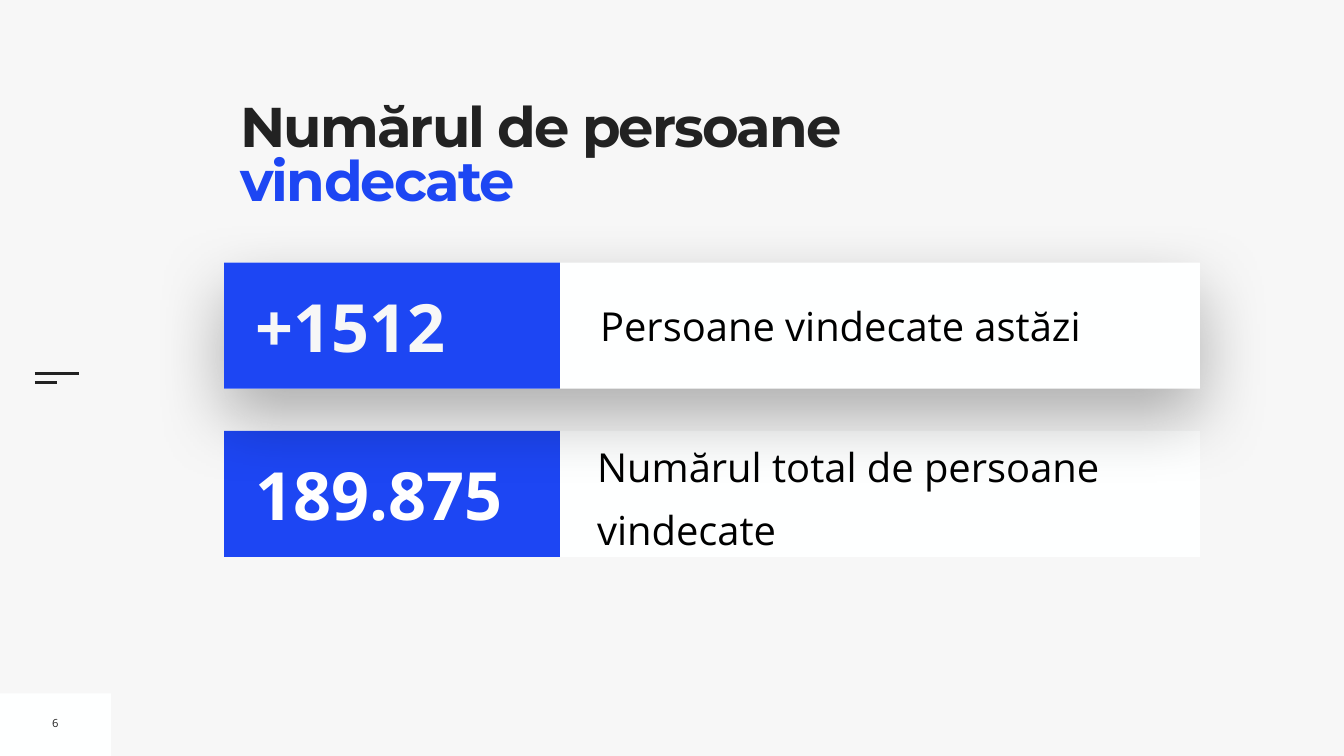
from lxml.etree import SubElement as Sub
from pptx import Presentation
from pptx.dml.color import RGBColor
from pptx.enum.shapes import MSO_CONNECTOR as Conn, MSO_SHAPE as Kind
from pptx.enum.text import MSO_ANCHOR as Anchor, PP_ALIGN as Align
from pptx.oxml.ns import qn
from pptx.util import Inches, Pt

BLUE, DARK, PALE, WHITE = "1D46F3", "222222", "F7F7F7", "FEFFFF"
LEFT, HIGH, WIDE = 4.45, 2.5, 6.66


def color(code):
    """Turn a hex string into a colour."""
    return RGBColor.from_string(code)


def paint(item, code):
    """Give a fill format one solid colour."""
    item.fill.solid()
    item.fill.fore_color.rgb = color(code)


def style(run, code, **form):
    """Set the font values and the colour of a run."""
    for name, value in form.items():
        setattr(run.font, name, value)
    run.font.color.rgb = color(code)


def frame(shape, inset, **form):
    """Set equal margins and other values of a text frame."""
    text = shape.text_frame
    for side in ("left", "top", "right", "bottom"):
        setattr(text, f"margin_{side}", Inches(inset))
    for name, value in form.items():
        setattr(text, name, value)
    return text


def block(slide, box, code):
    """Add a plain filled rectangle."""
    shape = slide.shapes.add_shape(Kind.RECTANGLE, *map(Inches, box))
    shape.shadow.inherit = False
    paint(shape, code)
    shape.line.fill.background()
    return shape


def shade(shape):
    """Add a soft shadow below a shape."""
    list_ = shape._element.spPr.find(qn("a:effectLst"))
    outer = Sub(list_, qn("a:outerShdw"), blurRad=str(Pt(100)), dist=str(Pt(40)),
                dir="5400000", algn="ctr", rotWithShape="0")
    tint = Sub(outer, qn("a:srgbClr"), val="000000")
    Sub(tint, qn("a:alpha"), val="30000")


def label(slide, box, words, code, size, inset=0.1, wrap=True, bold=False, **form):
    """Add a text box with one line of styled text."""
    shape = slide.shapes.add_textbox(*map(Inches, box))
    text = frame(shape, inset, word_wrap=wrap, vertical_anchor=Anchor.MIDDLE)
    para = text.paragraphs[0]
    for name, value in form.items():
        setattr(para, name, value)
    run = para.add_run()
    run.text = words
    style(run, code, name="Open Sans", size=Pt(size), bold=bold)


def rule(slide, top, length):
    """Add a short horizontal line at the left edge."""
    line = slide.shapes.add_connector(
        Conn.STRAIGHT, Inches(0.69), Inches(top), Inches(0.69 + length), Inches(top))
    line.line.color.rgb = color(DARK)
    line.line.width = Pt(3)
    Sub(line._element.spPr, qn("a:effectLst"))


def head(slide):
    """Place and fill the two-colour title."""
    title = slide.shapes.title
    spot = {"left": 4.77, "top": 2.07, "width": 13.01, "height": 2.73}
    for name, value in spot.items():
        setattr(title, name, Inches(value))
    paint(title, PALE)
    text = frame(title, 0, word_wrap=True, vertical_anchor=Anchor.TOP)
    para = text.paragraphs[0]
    para.alignment, para.line_spacing = Align.LEFT, 0.8
    for words, code in (("Numărul de persoane ", DARK), ("vindecate", BLUE)):
        run = para.add_run()
        run.text = words
        style(run, code, name="Montserrat", size=Pt(80), bold=True)
        run.font._element.set("spc", "-270")


def card(slide, top, count, code, words, box, raised=False, **form):
    """Add a card with a figure on blue and its meaning on white."""
    base = block(slide, (LEFT, top, 19.36, HIGH), WHITE)
    if raised:
        shade(base)
    label(slide, box, words, "000000", 57, **form)
    block(slide, (LEFT, top, WIDE, HIGH), BLUE)
    label(slide, (4.98, top + 0.35, 6.03, 1.8), count, code, 95, bold=True)


def main():
    """Build the slide and save it."""
    deck = Presentation()
    deck.slide_width, deck.slide_height = Inches(26.67), Inches(15)
    slide = deck.slides.add_slide(deck.slide_layouts[5])
    paint(slide.background, PALE)
    block(slide, (0, 13.76, 2.2, 1.24), WHITE)
    rule(slide, 7.41, 0.88)
    rule(slide, 7.59, 0.44)
    head(slide)
    label(slide, (0.93, 14.09, 0.34, 0.51), "6", DARK, 16, wrap=False,
          alignment=Align.CENTER)
    card(slide, 8.55, "189.875", "FFFFFF", "Numărul total de persoane vindecate",
         (11.85, 8.56, 11.95, 2.36), inset=0, line_spacing=1.3, space_before=Pt(20))
    card(slide, 5.21, "+1512", PALE, "Persoane vindecate astăzi",
         (11.81, 5.87, 11.76, 1.16), raised=True)
    deck.save("out.pptx")


if __name__ == "__main__":
    main()
